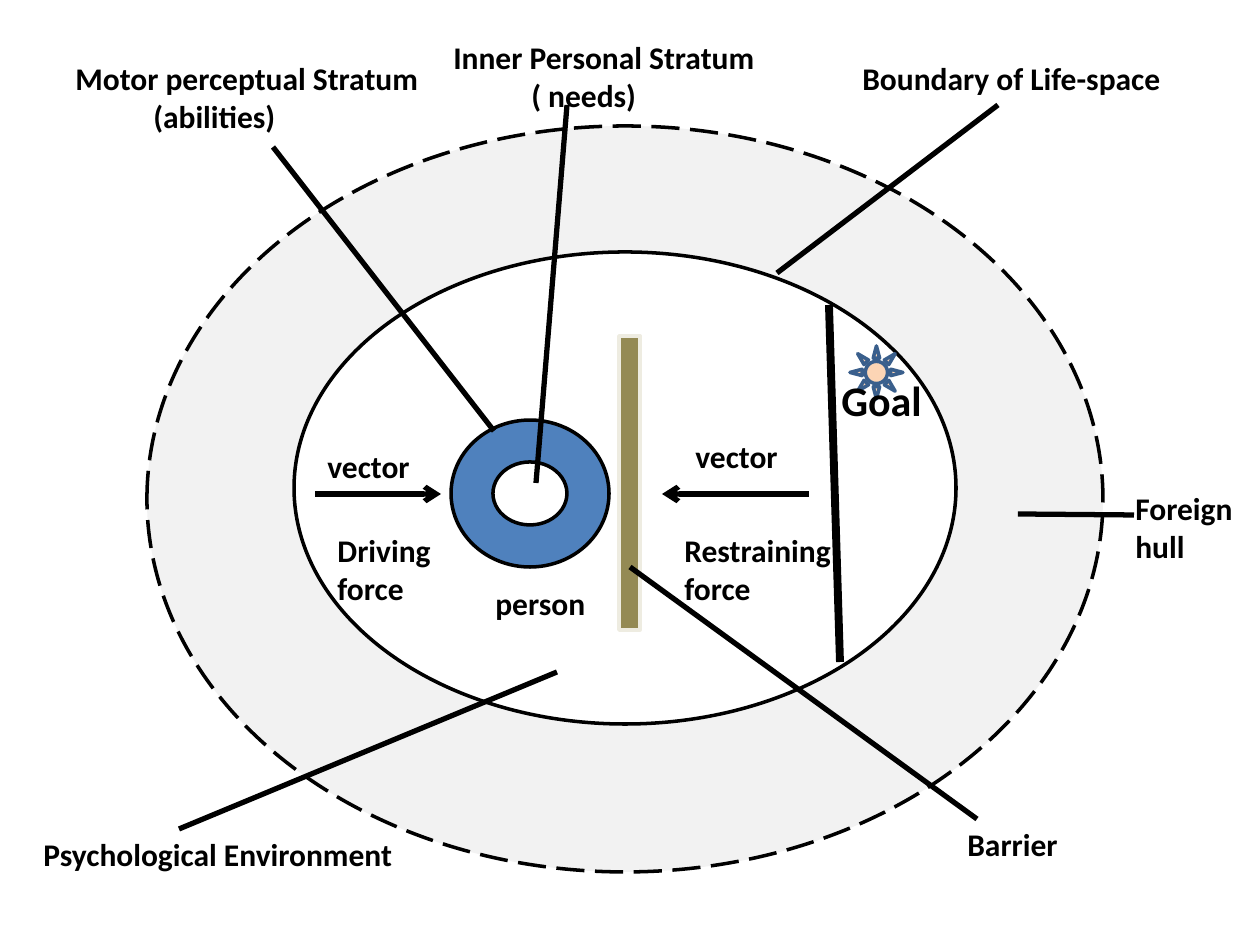
from pptx import Presentation
from pptx.dml.color import RGBColor
from pptx.enum.dml import MSO_LINE
from pptx.enum.shapes import MSO_CONNECTOR, MSO_SHAPE
from pptx.enum.text import MSO_AUTO_SIZE
from pptx.oxml.ns import qn
from pptx.util import Emu, Pt
from lxml import etree

OVAL = MSO_SHAPE.OVAL
RECT = MSO_SHAPE.RECTANGLE
SUN = MSO_SHAPE.SUN
LINE = MSO_CONNECTOR.STRAIGHT
DASH = MSO_LINE.LONG_DASH
GROW = MSO_AUTO_SIZE.SHAPE_TO_FIT_TEXT

BLACK = RGBColor(0x00, 0x00, 0x00)
WHITE = RGBColor(0xFF, 0xFF, 0xFF)
GREY = RGBColor(0xF2, 0xF2, 0xF2)
BLUE = RGBColor(0x4F, 0x81, 0xBD)
NAVY = RGBColor(0x3A, 0x5F, 0x8C)
OLIVE = RGBColor(0x94, 0x8A, 0x54)
CREAM = RGBColor(0xEE, 0xEC, 0xE1)
PEACH = RGBColor(0xFC, 0xD5, 0xB5)

SCALE = 914400 / 126
INDENT = 78


def px(*nums):
    return [Emu(round(n * SCALE)) for n in nums]


prs = Presentation()
prs.slide_width, prs.slide_height = px(1260, 945)
slide = prs.slides.add_slide(prs.slide_layouts[6])
shapes = slide.shapes

forms = [
    (OVAL, (147, 126, 956, 746), GREY, BLACK),
    (OVAL, (294, 252, 662, 472), WHITE, BLACK),
    (OVAL, (451, 420, 158, 147), BLUE, BLACK),
    (OVAL, (493, 462, 74, 63), WHITE, BLACK),
    (RECT, (619, 336, 21, 294), OLIVE, CREAM),
    (SUN, (850, 346, 53, 53), PEACH, NAVY),
]
drawn = []
for kind, box, fill, edge in forms:
    form = shapes.add_shape(kind, *px(*box))
    form.shadow.inherit = False
    form.fill.solid()
    form.fill.fore_color.rgb = fill
    form.line.color.rgb = edge
    form.line.width = Pt(2)
    drawn.append(form)
hull, sun = drawn[0], drawn[-1]
hull.line.dash_style = DASH
sun.adjustments[0] = 0.29

labels = [
    ("vector", (315, 441, 116, 50), 18),
    ("vector", (683, 431, 116, 50), 18),
    ("Driving force", (325, 525, 147, 89), 18),
    ("Restraining force", (672, 525, 189, 89), 18),
    ("person", (483, 578, 116, 50), 18),
    ("Inner Personal Stratum\n( needs)", (441, 32, 378, 89), 18),
    ("Motor perceptual Stratum\n(abilities)", (63, 53, 378, 89), 18),
    ("Boundary of Life-space", (850, 53, 378, 50), 18),
    ("Foreign\nhull", (1123, 483, 137, 89), 18),
    ("Barrier", (955, 819, 137, 50), 18),
    ("Psychological Environment", (31, 829, 388, 50), 18),
    ("Goal", (829, 368, 116, 63), 24),
]
for text, box, size in labels:
    frame = shapes.add_textbox(*px(*box)).text_frame
    frame.word_wrap = True
    frame.auto_size = GROW
    frame.text = text
    for para in frame.paragraphs:
        if para.text.startswith("("):
            para._p.get_or_add_pPr().set("marL", str(px(INDENT)[0]))
        font = para.runs[0].font
        font.name = "Calibri"
        font.size = Pt(size)
        font.bold = True
        font.color.rgb = BLACK

lines = [
    ((315, 494, 441, 494), 3, True),
    ((809, 494, 662, 494), 3, True),
    ((829, 305, 840, 662), 4.5, False),
    ((494, 431, 273, 147), 3, False),
    ((536, 483, 567, 105), 3, False),
    ((777, 273, 998, 105), 3, False),
    ((1018, 514, 1134, 515), 3, False),
    ((977, 819, 630, 567), 3, False),
    ((557, 672, 179, 829), 3, False),
]
for ends, width, arrow in lines:
    line = shapes.add_connector(LINE, *px(*ends))
    line.line.color.rgb = BLACK
    line.line.width = Pt(width)
    if arrow:
        tip = etree.SubElement(line.get_or_add_ln(), qn("a:tailEnd"))
        tip.set("type", "arrow")
    etree.SubElement(line._element.spPr, qn("a:effectLst"))

prs.save("out.pptx")
